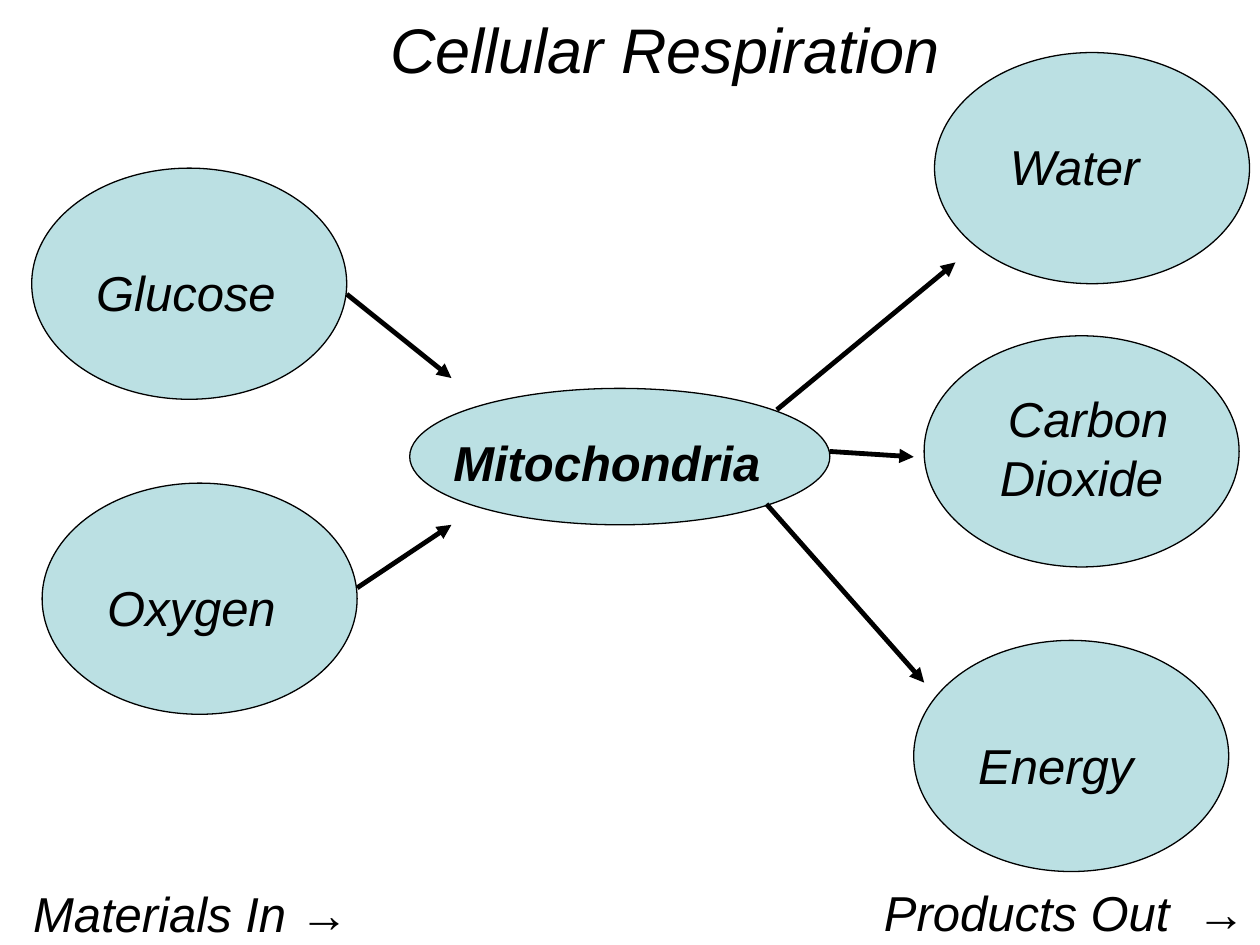
import pptx
import pptx.util
import pptx.dml.color
import pptx.enum.shapes
import pptx.enum.text
import pptx.oxml.ns
from lxml import etree

Cm, Pt = pptx.util.Cm, pptx.util.Pt
RGB = pptx.dml.color.RGBColor
ALIGN = pptx.enum.text.PP_ALIGN
BLACK = RGB(0, 0, 0)
AQUA = RGB(0xBB, 0xE0, 0xE3)

# Content, all lengths in cm
BIG = (6.35, 4.66)
DROP = 0.09  # nudge that seats text on its line

# Bubbles: left, top, size
ovals = [
    (0.64, 3.39, BIG),              # glucose
    (0.85, 9.74, BIG),              # oxygen
    (8.26, 7.83, (8.47, 2.75)),     # mitochondria
    (18.84, 1.06, BIG),             # water
    (18.63, 6.77, BIG),             # carbon dioxide
    (18.42, 12.91, BIG),            # energy
]

# Arrows: start, end
arrows = [
    ((6.99, 5.93), (9.1, 7.62)),
    ((7.2, 11.85), (9.1, 10.58)),
    ((15.66, 8.26), (19.26, 5.29)),
    ((16.72, 9.1), (18.42, 9.21)),
    ((15.45, 10.16), (18.63, 13.76)),
]

# Labels: text, left, top, width, then what differs from the usual
labels = [
    ("Cellular Respiration", 7.62, 0, 11.71, {"size": 36}),
    ("Glucose", 1.69, 5.08, 4.23, {}),
    ("Oxygen", 1.91, 11.43, 4.23, {}),
    ("Mitochondria", 8.89, 8.5, 6.99, {"bold": True}),
    ("Water", 20.11, 2.54, 4.23, {}),
    (" Carbon Dioxide", 19.47, 7.62, 4.66,
     {"align": ALIGN.CENTER, "lines": 2}),
    ("Energy", 19.47, 14.61, 4.23, {}),
    ("Materials In →", 0.42, 17.6, 9.53, {}),
    ("Products Out  →", 17.57, 17.58, 7.83, {}),
]

deck = pptx.Presentation()
deck.slide_width, deck.slide_height = Cm(25.4), Cm(19.05)
slide = deck.slides.add_slide(deck.slide_layouts[6])
shapes = slide.shapes


def add_oval(left, top, size):
    oval = shapes.add_shape(pptx.enum.shapes.MSO_SHAPE.OVAL,
                            Cm(left), Cm(top), *map(Cm, size))
    oval.shadow.inherit = False
    oval.fill.solid()
    oval.fill.fore_color.rgb = AQUA
    oval.line.color.rgb = BLACK
    oval.line.width = Pt(0.75)


def add_arrow(start, end):
    line = shapes.add_connector(pptx.enum.shapes.MSO_CONNECTOR.STRAIGHT,
                                *map(Cm, start + end))
    line.line.color.rgb = BLACK
    line.line.width = Pt(2.75)
    qn = pptx.oxml.ns.qn
    props = line.line._get_or_add_ln()
    etree.SubElement(props, qn("a:tailEnd"), type="triangle")
    etree.SubElement(props.getparent(), qn("a:effectLst"))


def add_label(text, left, top, width, size=28, bold=False,
              align=ALIGN.LEFT, lines=1):
    high = 0.25 + lines * size * 0.04
    box = shapes.add_textbox(Cm(left), Cm(top + DROP), Cm(width), Cm(high))
    frame = box.text_frame
    frame.word_wrap = True
    para = frame.paragraphs[0]
    para.text = text
    para.alignment = align
    font = para.font
    font.name, font.size = "Arial", Pt(size)
    font.italic, font.bold = True, bold
    font.color.rgb = BLACK


# Draw from back to front
for draw, rows in ((add_oval, ovals), (add_arrow, arrows)):
    for row in rows:
        draw(*row)
for *place, extra in labels:
    add_label(*place, **extra)

deck.save("out.pptx")
